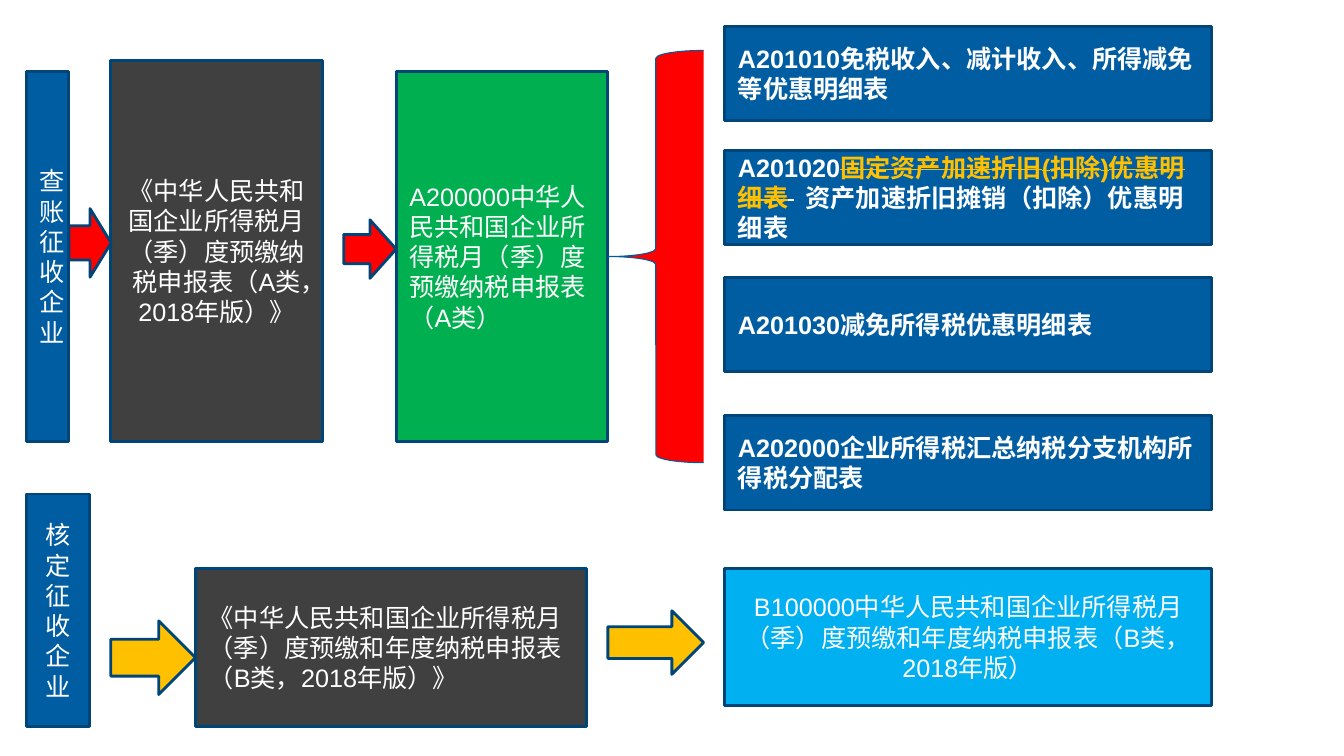
"""Build the slide that maps enterprise types to their income tax return forms."""
from dataclasses import dataclass

from pptx import Presentation
from pptx.dml.color import RGBColor
from pptx.enum.shapes import MSO_SHAPE as SHAPE
from pptx.enum.text import MSO_ANCHOR as ANCHOR, PP_ALIGN as ALIGN
from pptx.util import Pt


@dataclass(frozen=True)
class Theme:
    """Colours, type and line sizes of the slide."""
    blue: str = "005DA2"
    edge: str = "004578"
    brace_edge: str = "005B9E"
    grey: str = "404040"
    green: str = "00B050"
    sky: str = "00B0F0"
    red: str = "FF0000"
    gold: str = "FFC000"
    white: str = "FFFFFF"
    font: str = "Arial"
    size: float = 18
    line: float = 2
    thin: float = 0.75


THEME = Theme()
FORM_X, FORM_W, FORM_H = 517.7, 347.8, 67.7
FORMS = [
    (18.7, [("A201010免税收入、减计收入、所得减免等优惠明细表",)]),
    (107.3, [("A201020",),
             ("固定资产加速折旧(扣除)优惠明细表", THEME.gold, True),
             (" ", THEME.white, True),
             ("  资产加速折旧摊销（扣除）优惠明细表",)]),
    (198, [("A201030减免所得税优惠明细表",)]),
    (296.6, [("A202000企业所得税汇总纳税分支机构所得税分配表",)]),
]


def add_block(slide, kind, box, fill, edge=THEME.edge, line=THEME.line):
    """Add a filled and outlined preset shape."""
    sp = slide.shapes.add_shape(kind, *(Pt(v) for v in box))
    sp.shadow.inherit = False
    sp.fill.solid()
    sp.fill.fore_color.rgb = RGBColor.from_string(fill)
    sp.line.color.rgb = RGBColor.from_string(edge)
    sp.line.width = Pt(line)
    return sp


def add_run(p, text, color=THEME.white, strike=False, bold=False):
    """Add a run of text to a paragraph."""
    r = p.add_run()
    r.text = text
    r.font.name = THEME.font
    r.font.size = Pt(THEME.size)
    r.font.bold = bold
    r.font.color.rgb = RGBColor.from_string(color)
    if strike:
        r.font._element.set("strike", "sngStrike")


def add_box(slide, box, fill, runs, align=ALIGN.LEFT, bold=False):
    """Add a rectangle with vertically centred text."""
    tf = add_block(slide, SHAPE.RECTANGLE, box, fill).text_frame
    tf.word_wrap = True
    tf.vertical_anchor = ANCHOR.MIDDLE
    tf.margin_left = tf.margin_right = Pt(9.4)
    tf.margin_top = tf.margin_bottom = Pt(5)
    p = tf.paragraphs[0]
    p.alignment = align
    for run in runs:
        add_run(p, *run, bold=bold)


def add_arrow(slide, box, fill):
    """Add a block arrow pointing right."""
    add_block(slide, SHAPE.RIGHT_ARROW, box, fill)


def add_audit_flow(slide):
    """Add the flow for enterprises taxed on audited accounts."""
    add_box(slide, (18.7, 51.1, 30.5, 264.2), THEME.blue,
            [("查账征收企业",)], ALIGN.CENTER)
    add_box(slide, (79.2, 43.2, 151.2, 272.2), THEME.grey,
            [("《中华人民共和国企业所得税月（季）度预缴纳税申报表（A类，2018年版）》",)],
            ALIGN.CENTER)
    add_box(slide, (283, 51.1, 151.2, 264.2), THEME.green,
            [("A200000中华人民共和国企业所得税月（季）度预缴纳税申报表（A类）",)])
    for top, runs in FORMS:
        add_box(slide, (FORM_X, top, FORM_W, FORM_H), THEME.blue, runs, bold=True)
    add_arrow(slide, (49.2, 149, 30.2, 49), THEME.red)
    add_arrow(slide, (245.5, 157, 37.5, 41.8), THEME.red)
    add_block(slide, SHAPE.LEFT_BRACE, (434.2, 36, 68.4, 294.5), THEME.red,
              THEME.brace_edge, THEME.thin)


def add_assessed_flow(slide):
    """Add the flow for enterprises taxed on an assessed basis."""
    add_box(slide, (18.7, 352.8, 45.4, 166.3), THEME.blue,
            [("核定征收企业",)], ALIGN.CENTER)
    add_box(slide, (139.7, 406.1, 279.4, 113), THEME.grey,
            [("《中华人民共和国企业所得税月（季）度预缴和年度纳税申报表（B类，2018年版）》",)])
    add_box(slide, (FORM_X, 406.1, FORM_W, 97.9), THEME.sky,
            [("B100000中华人民共和国企业所得税月（季）度预缴和年度纳税申报表（B类，2018年版）",)],
            ALIGN.CENTER)
    add_arrow(slide, (79.2, 443.5, 60.5, 52.6), THEME.gold)
    add_arrow(slide, (434.2, 436.3, 68.4, 45.4), THEME.gold)


def main():
    """Build and save the presentation."""
    prs = Presentation()
    prs.slide_width, prs.slide_height = Pt(960), Pt(540)
    slide = prs.slides.add_slide(prs.slide_layouts[6])
    add_audit_flow(slide)
    add_assessed_flow(slide)
    prs.save("out.pptx")


if __name__ == "__main__":
    main()
